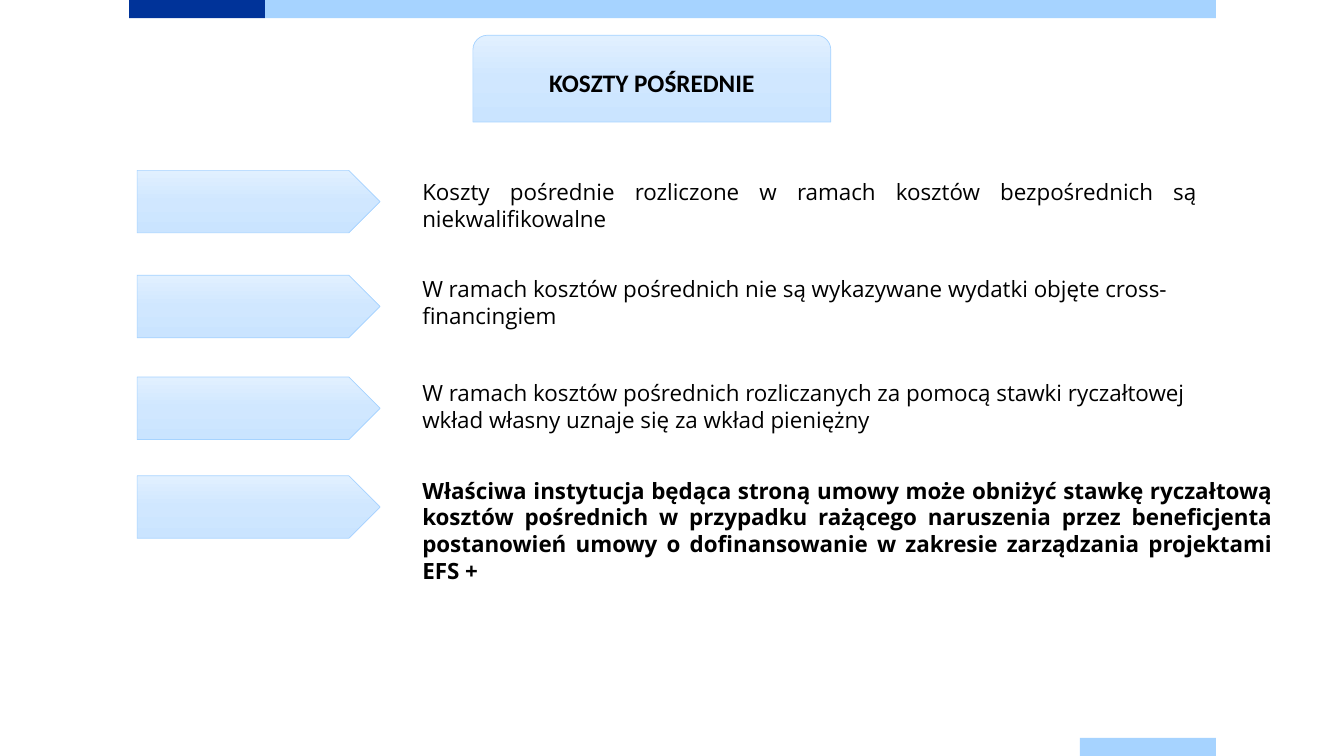
import copy
from dataclasses import dataclass

import pptx
import pptx.dml.color
import pptx.enum.shapes
import pptx.enum.text
import pptx.oxml.ns
import pptx.util

Inches = pptx.util.Inches
SHAPE = pptx.enum.shapes.MSO_SHAPE
ALIGN = pptx.enum.text.PP_ALIGN
ANCHOR = pptx.enum.text.MSO_ANCHOR


@dataclass(frozen=True)
class Theme:
    navy: str = "003399"
    sky: str = "A6D3FF"
    gradient: tuple = ("E1F0FF", "D0E7FF", "CAE4FF")
    text: str = "000000"
    title_font: str = "Calibri"
    body_font: str = "Open Sans"
    title_size: int = 18
    body_size: int = 16
    outline: float = 0.5


THEME = Theme()

POINTS = [
    (1.69, 1.72, 7.88, 0.64, ALIGN.JUSTIFY, False,
     "Koszty pośrednie rozliczone w ramach kosztów bezpośrednich są niekwalifikowalne"),
    (2.73, 2.68, 7.63, 0.64, ALIGN.LEFT, False,
     "W ramach kosztów pośrednich nie są wykazywane wydatki objęte cross-financingiem"),
    (3.74, 3.71, 7.88, 0.64, ALIGN.LEFT, False,
     "W ramach kosztów pośrednich rozliczanych za pomocą stawki ryczałtowej "
     "wkład własny uznaje się za wkład pieniężny"),
    (4.72, 4.68, 8.63, 1.18, ALIGN.JUSTIFY, True,
     "Właściwa instytucja będąca stroną umowy może obniżyć stawkę ryczałtową "
     "kosztów pośrednich w przypadku rażącego naruszenia przez beneficjenta "
     "postanowień umowy o dofinansowanie w zakresie zarządzania projektami EFS +"),
]


def rgb(color):
    return pptx.dml.color.RGBColor.from_string(color)


def write(tf, text, font=THEME.body_font, size=THEME.body_size, bold=False,
          align=ALIGN.LEFT, anchor=ANCHOR.TOP):
    tf.word_wrap = True
    tf.vertical_anchor = anchor
    p = tf.paragraphs[0]
    p.alignment = align
    r = p.add_run()
    r.text = text
    r.font.name = font
    r.font.size = pptx.util.Pt(size)
    r.font.bold = bold
    r.font.color.rgb = rgb(THEME.text)


def add_shape(s, kind, left, top, width, height):
    sp = s.shapes.add_shape(kind, Inches(left), Inches(top), Inches(width), Inches(height))
    sp.shadow.inherit = False
    return sp


def add_bar(s, left, top, width, color):
    sp = add_shape(s, SHAPE.RECTANGLE, left, top, width, 0.18)
    sp.fill.solid()
    sp.fill.fore_color.rgb = rgb(color)
    sp.line.fill.background()


def add_gradient_shape(s, kind, left, top, width, height):
    sp = add_shape(s, kind, left, top, width, height)
    sp.fill.gradient()
    sp.fill.gradient_angle = 270
    stops = next(sp._element.iter(pptx.oxml.ns.qn("a:gsLst")))
    stops.insert(1, copy.deepcopy(stops[0]))
    for stop, position, color in zip(sp.fill.gradient_stops, (0, 0.5, 1), THEME.gradient):
        stop.position = position
        stop.color.rgb = rgb(color)
    sp.line.color.rgb = rgb(THEME.sky)
    sp.line.width = pptx.util.Pt(THEME.outline)


def add_title(s, text, left, top, width, height):
    add_gradient_shape(s, SHAPE.ROUND_2_SAME_RECTANGLE, left, top, width, height)
    title = s.shapes.title
    title.left, title.top = Inches(left), Inches(top + 0.04)
    title.width, title.height = Inches(width), Inches(height)
    s.shapes._spTree.append(title._element)
    write(title.text_frame, text, font=THEME.title_font, size=THEME.title_size,
          bold=True, align=ALIGN.CENTER, anchor=ANCHOR.MIDDLE)


def add_point(s, arrow_top, top, width, height, align, bold, text):
    add_gradient_shape(s, SHAPE.PENTAGON, 1.36, arrow_top, 2.41, 0.62)
    box = s.shapes.add_textbox(Inches(4.09), Inches(top), Inches(width), Inches(height))
    write(box.text_frame, text, bold=bold, align=align)
    box.text_frame.auto_size = pptx.enum.text.MSO_AUTO_SIZE.SHAPE_TO_FIT_TEXT


def main():
    prs = pptx.Presentation()
    prs.slide_width, prs.slide_height = Inches(13.33), Inches(7.5)
    s = prs.slides.add_slide(prs.slide_layouts[5])
    add_bar(s, 1.28, 0, 1.35, THEME.navy)
    add_bar(s, 2.63, 0, 9.43, THEME.sky)
    add_bar(s, 10.71, 7.32, 1.35, THEME.sky)
    add_title(s, "KOSZTY POŚREDNIE", 4.69, 0.35, 3.55, 0.86)
    for point in POINTS:
        add_point(s, *point)
    prs.save("out.pptx")


if __name__ == "__main__":
    main()
